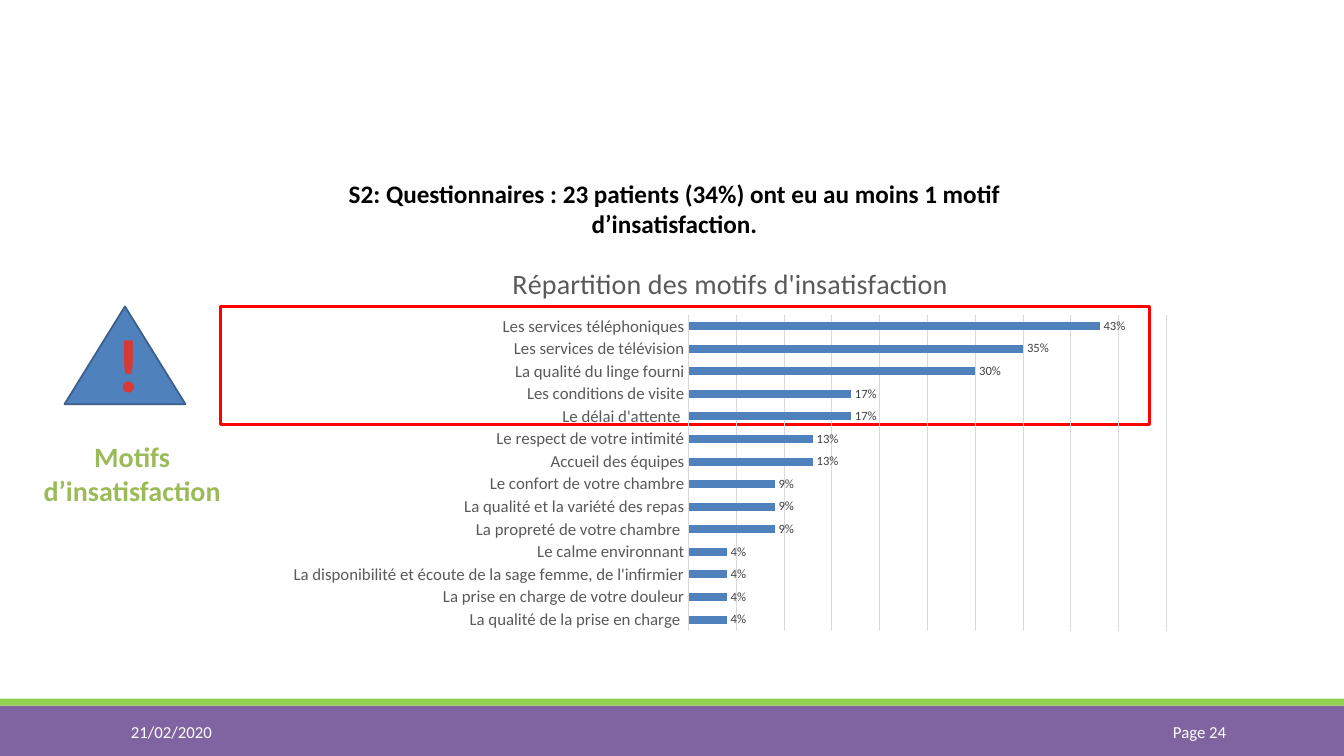
from lxml.etree import Element, SubElement
from pptx import Presentation
from pptx.chart.data import CategoryChartData
from pptx.dml.color import RGBColor
from pptx.enum.chart import XL_CHART_TYPE, XL_LABEL_POSITION, XL_TICK_LABEL_POSITION, XL_TICK_MARK
from pptx.enum.shapes import MSO_SHAPE
from pptx.enum.text import MSO_ANCHOR, PP_ALIGN
from pptx.oxml.ns import qn
from pptx.util import Inches, Pt

WIDTH, HEIGHT = Inches(13.33), Inches(7.5)
FONT = "Calibri"
COLORS = {
    "purple": "8064A2", "band": "92D050", "olive": "9BBB59",
    "blue": "4F81BD", "edge": "3A5F8C", "red": "FF0000", "alert": "D73A36",
    "white": "FFFFFF", "black": "000000",
    "label": "404040", "axis": "595959", "grid": "D9D9D9",
}
REASONS = [
    ("La qualité de la prise en charge ", 0.04),
    ("La prise en charge de votre douleur", 0.04),
    ("La disponibilité et écoute de la sage femme, de l'infirmier", 0.04),
    ("Le calme environnant", 0.04),
    ("La propreté de votre chambre ", 0.09),
    ("La qualité et la variété des repas", 0.09),
    ("Le confort de votre chambre", 0.09),
    ("Accueil des équipes", 0.13),
    ("Le respect de votre intimité", 0.13),
    ("Le délai d'attente ", 0.17),
    ("Les conditions de visite", 0.17),
    ("La qualité du linge fourni", 0.3),
    ("Les services de télévision", 0.35),
    ("Les services téléphoniques", 0.43),
]


def color(name):
    return RGBColor.from_string(COLORS[name])


def place(left, top, width, height):
    return (int(WIDTH * left / 100), int(HEIGHT * top / 100),
            int(WIDTH * width / 100), int(HEIGHT * height / 100))


def style(font, size, name, bold=False):
    font.name, font.size, font.bold = FONT, Pt(size), bold
    font.color.rgb = color(name)


def draw_line(line, name, weight):
    line.color.rgb = color(name)
    line.width = Pt(weight)


def add_block(slide, kind, area, fill=None, edge=None, weight=0):
    block = slide.shapes.add_shape(kind, *place(*area))
    block.shadow.inherit = False
    if fill:
        block.fill.solid()
        block.fill.fore_color.rgb = color(fill)
    else:
        block.fill.background()
    if edge:
        draw_line(block.line, edge, weight)
    else:
        block.line.fill.background()


def add_words(slide, words, area, size, name, align=PP_ALIGN.CENTER,
              bold=True, anchor=MSO_ANCHOR.TOP, wrap=True):
    frame = slide.shapes.add_textbox(*place(*area)).text_frame
    frame.word_wrap, frame.vertical_anchor = wrap, anchor
    frame.text = words
    paragraph = frame.paragraphs[0]
    paragraph.alignment = align
    run = paragraph.runs[0]
    style(run.font, size, name, bold)
    return run


def outline_run(run, name, weight):
    properties = run.font._element
    outline = Element(qn("a:ln"), w=str(Pt(weight)))
    fill = SubElement(outline, qn("a:solidFill"))
    SubElement(fill, qn("a:srgbClr"), val=COLORS[name])
    properties.insert(0, outline)


def set_layout(parent, position, **percents):
    for old in parent.findall(qn("c:layout")):
        parent.remove(old)
    layout = Element(qn("c:layout"))
    manual = SubElement(layout, qn("c:manualLayout"))
    if "w" in percents:
        SubElement(manual, qn("c:layoutTarget"), val="inner")
    for side in "xy":
        SubElement(manual, qn(f"c:{side}Mode"), val="edge")
    for side, percent in percents.items():
        SubElement(manual, qn(f"c:{side}"), val=f"{percent / 100:.3f}")
    parent.insert(position, layout)


def add_reasons_chart(slide, area):
    data = CategoryChartData(number_format="0%")
    data.categories = [reason for reason, share in REASONS]
    data.add_series("Series 1", [share for reason, share in REASONS])
    chart = slide.shapes.add_chart(XL_CHART_TYPE.BAR_CLUSTERED, *place(*area), data).chart
    style(chart.font, 10, "black")
    chart.has_legend = False

    chart.has_title = True
    heading = chart.chart_title.text_frame
    heading.text = "Répartition des motifs d'insatisfaction"
    style(heading.paragraphs[0].runs[0].font, 20, "axis")
    chart.chart_title.include_in_layout = False
    set_layout(chart.element.chart.find(qn("c:title")), 1, x=25.5, y=2.3)
    set_layout(chart.element.chart.plotArea, 0, x=45.4, y=16.7, w=52.5, h=81.2)

    reasons = chart.category_axis
    reasons.major_tick_mark = reasons.minor_tick_mark = XL_TICK_MARK.NONE
    reasons.tick_label_position = XL_TICK_LABEL_POSITION.NEXT_TO_AXIS
    style(reasons.tick_labels.font, 12, "axis")
    draw_line(reasons.format.line, "grid", 0.75)

    shares = chart.value_axis
    shares.minimum_scale, shares.maximum_scale, shares.major_unit = 0, 0.5, 0.05
    shares.visible = False
    shares.has_major_gridlines = True
    draw_line(shares.major_gridlines.format.line, "grid", 0.75)

    bars = chart.plots[0]
    bars.gap_width, bars.vary_by_categories = 182, False
    bars.series[0].format.fill.solid()
    bars.series[0].format.fill.fore_color.rgb = color("blue")
    bars.has_data_labels = True
    labels = bars.data_labels
    labels.show_value, labels.position = True, XL_LABEL_POSITION.OUTSIDE_END
    labels.number_format, labels.number_format_is_linked = "0%", False
    style(labels.font, 9, "label")


def add_footer(slide):
    add_block(slide, MSO_SHAPE.RECTANGLE, (0, 93.33, 100, 6.67), "purple")
    add_block(slide, MSO_SHAPE.RECTANGLE, (0, 92.4, 100, 0.93), "band")
    for words, left, width, align in (("21/02/2020", 9, 20.25, PP_ALIGN.LEFT),
                                      ("Page 24", 81.25, 10.73, PP_ALIGN.RIGHT)):
        add_words(slide, words, (left, 94.13, width, 5.33), 12, "white",
                  align, False, MSO_ANCHOR.MIDDLE)


def main():
    deck = Presentation()
    deck.slide_width, deck.slide_height = WIDTH, HEIGHT
    slide = deck.slides.add_slide(deck.slide_layouts[6])
    add_footer(slide)
    add_words(slide, "S2: Questionnaires : 23 patients (34%) ont eu au moins 1 motif d’insatisfaction.",
              (22.43, 22.93, 55.51, 9.47), 18, "black")
    add_block(slide, MSO_SHAPE.ISOSCELES_TRIANGLE, (4.8, 40.53, 9, 12.93), "blue", "edge", 1.25)
    add_block(slide, MSO_SHAPE.RECTANGLE, (16.43, 40.53, 69.09, 15.6), edge="red", weight=2.25)
    add_reasons_chart(slide, (20.48, 33.07, 67.74, 51.47))
    add_words(slide, "Motifs d’insatisfaction", (2.33, 57.47, 15, 10.27), 20, "olive")
    mark = add_words(slide, "!", (7.88, 41.33, 3.45, 13.47), 54, "alert", wrap=False)
    outline_run(mark, "alert", 1.42)
    deck.save("out.pptx")


if __name__ == "__main__":
    main()
